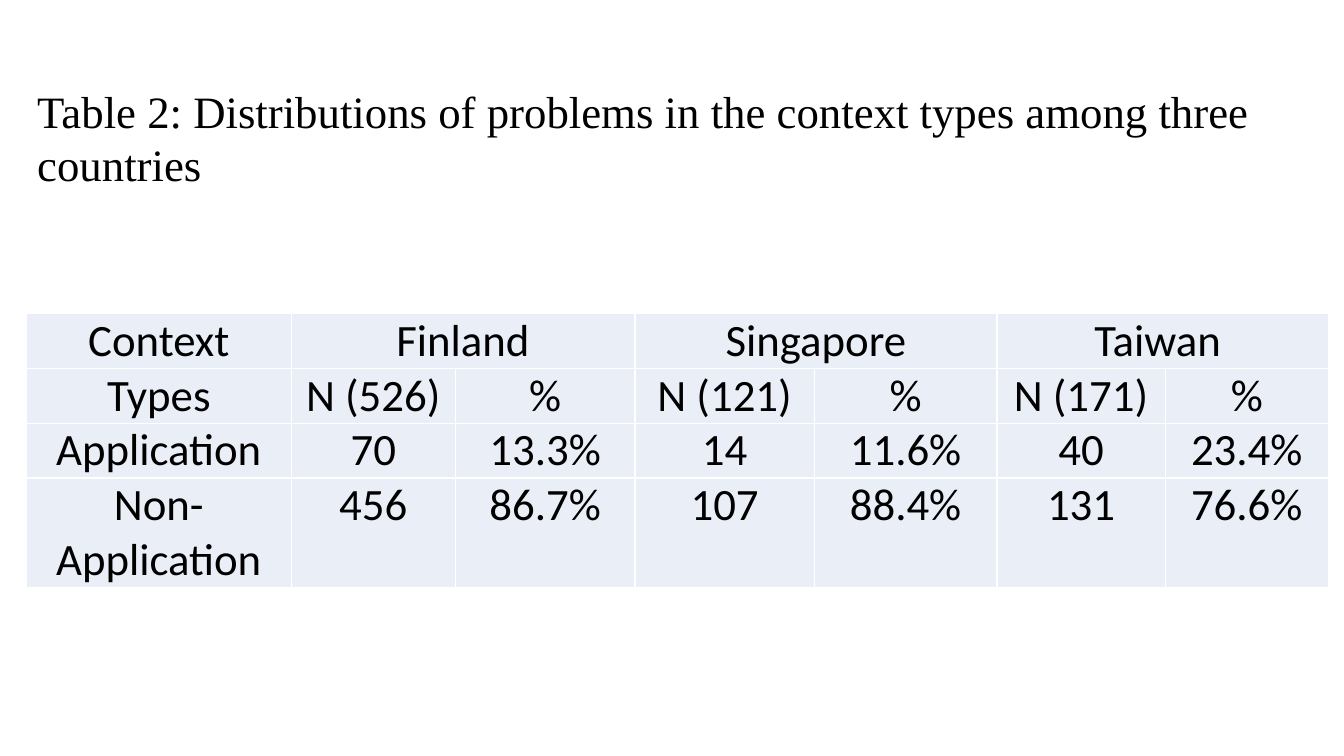
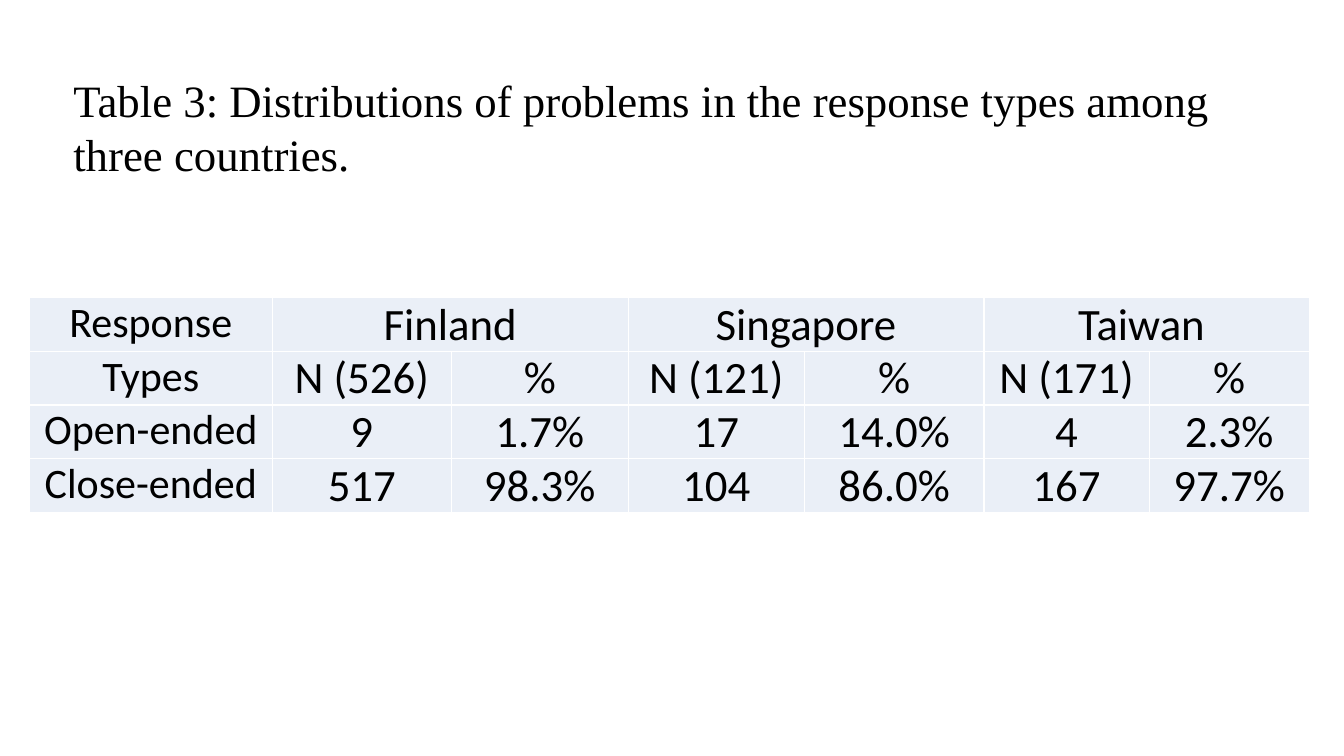
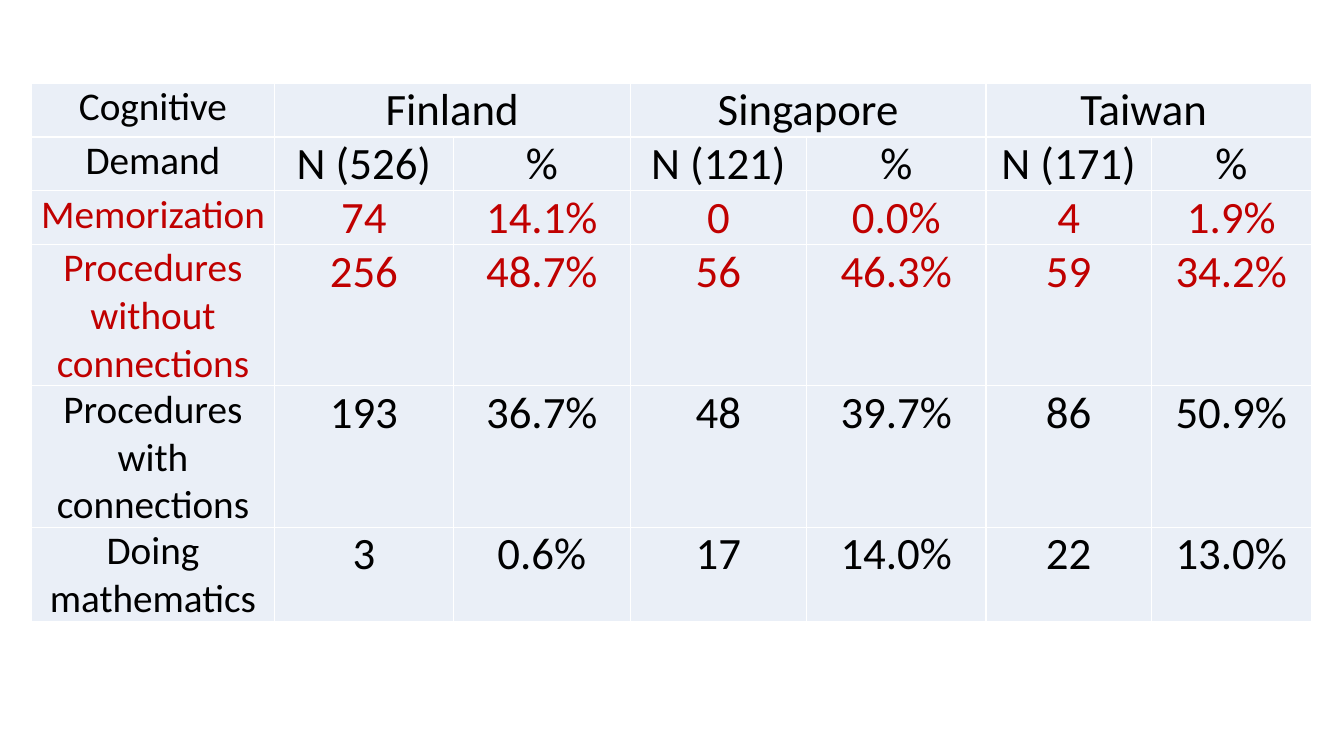
from dataclasses import dataclass

from lxml import etree
from pptx import Presentation
from pptx.dml.color import RGBColor
from pptx.enum.text import MSO_AUTO_SIZE, PP_ALIGN
from pptx.oxml.ns import qn
from pptx.util import Pt

CENTER = PP_ALIGN.CENTER
LEFT = PP_ALIGN.LEFT
GROW = MSO_AUTO_SIZE.SHAPE_TO_FIT_TEXT


@dataclass(frozen=True)
class Theme:
    text: str = "000000"
    accent: str = "C00000"
    cell: str = "EAEFF7"
    border: str = "FFFFFF"
    title_font: str = "Times New Roman"
    table_font: str = "Calibri"
    size: int = 32
    space: int = 6
    inset: float = 5.4
    border_width: int = 1
    line: float = 1.2


class Deck:
    def __init__(self, theme):
        self.theme = theme
        self.prs = Presentation()
        self.prs.slide_width = Pt(960)
        self.prs.slide_height = Pt(540)
        self.slide = None

    def add_slide(self):
        self.slide = self.prs.slides.add_slide(self.prs.slide_layouts[6])

    def set_text(self, tf, text, font, size, color, align):
        p = tf.paragraphs[0]
        p.text = text
        p.alignment = align
        p.space_before = Pt(self.theme.space)
        p.font.name = font
        p.font.size = Pt(size)
        p.font.color.rgb = RGBColor.from_string(color)
        return p

    def title(self, text, left, top, width):
        t = self.theme
        sp = self.slide.shapes.add_textbox(Pt(left), Pt(top), Pt(width), Pt(85))
        tf = sp.text_frame
        tf.word_wrap = True
        tf.auto_size = GROW
        p = self.set_text(tf, text, t.title_font, t.size, t.text, LEFT)
        p.space_after = Pt(t.space)

    def borders(self, cell):
        tc_pr = cell._tc.get_or_add_tcPr()
        for i, side in enumerate(("a:lnL", "a:lnR", "a:lnT", "a:lnB")):
            ln = etree.Element(qn(side), w=str(Pt(self.theme.border_width)))
            fill = etree.SubElement(ln, qn("a:solidFill"))
            etree.SubElement(fill, qn("a:srgbClr"), val=self.theme.border)
            tc_pr.insert(i, ln)

    def table(self, rows, left, top, widths, label_size, label_lines, accent_rows=()):
        t = self.theme
        heights = [max(t.size, n * label_size) * t.line for n in label_lines]
        frame = self.slide.shapes.add_table(
            len(rows), len(widths), Pt(left), Pt(top), Pt(sum(widths)), Pt(sum(heights)))
        table = frame.table
        table.first_row = table.horz_banding = False
        for column, width in zip(table.columns, widths):
            column.width = Pt(width)
        for r, (values, height) in enumerate(zip(rows, heights)):
            table.rows[r].height = Pt(height)
            color = t.accent if r in accent_rows else t.text
            for c, value in enumerate(values):
                cell = table.cell(r, c)
                cell.margin_left = cell.margin_right = Pt(t.inset)
                cell.margin_top = cell.margin_bottom = 0
                cell.fill.solid()
                cell.fill.fore_color.rgb = RGBColor.from_string(t.cell)
                self.borders(cell)
                size = t.size if c else label_size
                self.set_text(cell.text_frame, value, t.table_font, size, color, CENTER)
        for c in range(1, len(widths), 2):
            table.cell(0, c).merge(table.cell(0, c + 1))


COUNTRIES = ["Finland", "", "Singapore", "", "Taiwan ", ""]
MEASURES = ["N (526)", "%", "N (121)", "%", "N (171)", "%"]
CONTEXT_WIDTHS = [189, 117.4, 128.2, 128.2, 130.4, 120.2, 116.6]
COMMON_WIDTHS = [173.5, 128, 126.2, 126, 128.2, 118, 114.4]


def with_header(first, second, *body):
    return [[first, *COUNTRIES], [second, *MEASURES], *body]


def main():
    deck = Deck(Theme())

    deck.add_slide()
    deck.table(
        with_header(
            "Context", "Types",
            ["Application", "70", "13.3%", "14", "11.6%", "40", "23.4%"],
            ["Non-Application", "456", "86.7%", "107", "88.4%", "131", "76.6%"]),
        19, 224, CONTEXT_WIDTHS, 32, [1, 1, 1, 2])
    deck.title("Table 2: Distributions of problems in the context types among three countries",
               19.5, 56, 932)

    deck.add_slide()
    deck.title("Table 3: Distributions of problems in the response types among three countries.",
               45.3, 48.2, 860.4)
    deck.table(
        with_header(
            "Response", "Types",
            ["Open-ended", "9", "1.7%", "17", "14.0%", "4", "2.3%"],
            ["Close-ended", "517", "98.3%", "104", "86.0%", "167", "97.7%"]),
        21, 212.4, COMMON_WIDTHS, 30, [1, 1, 1, 1])

    deck.add_slide()
    deck.table(
        with_header(
            "Cognitive", "Demand",
            ["Memorization", "74", "14.1%", "0", "0.0%", "4", "1.9%"],
            ["Procedures without connections", "256", "48.7%", "56", "46.3%", "59", "34.2%"],
            ["Procedures with connections", "193", "36.7%", "48", "39.7%", "86", "50.9%"],
            ["Doing mathematics", "3", "0.6%", "17", "14.0%", "22", "13.0%"]),
        22.5, 59.4, COMMON_WIDTHS, 28, [1, 1, 1, 3, 3, 2], accent_rows=(2, 3))

    deck.prs.save("out.pptx")


if __name__ == "__main__":
    main()
